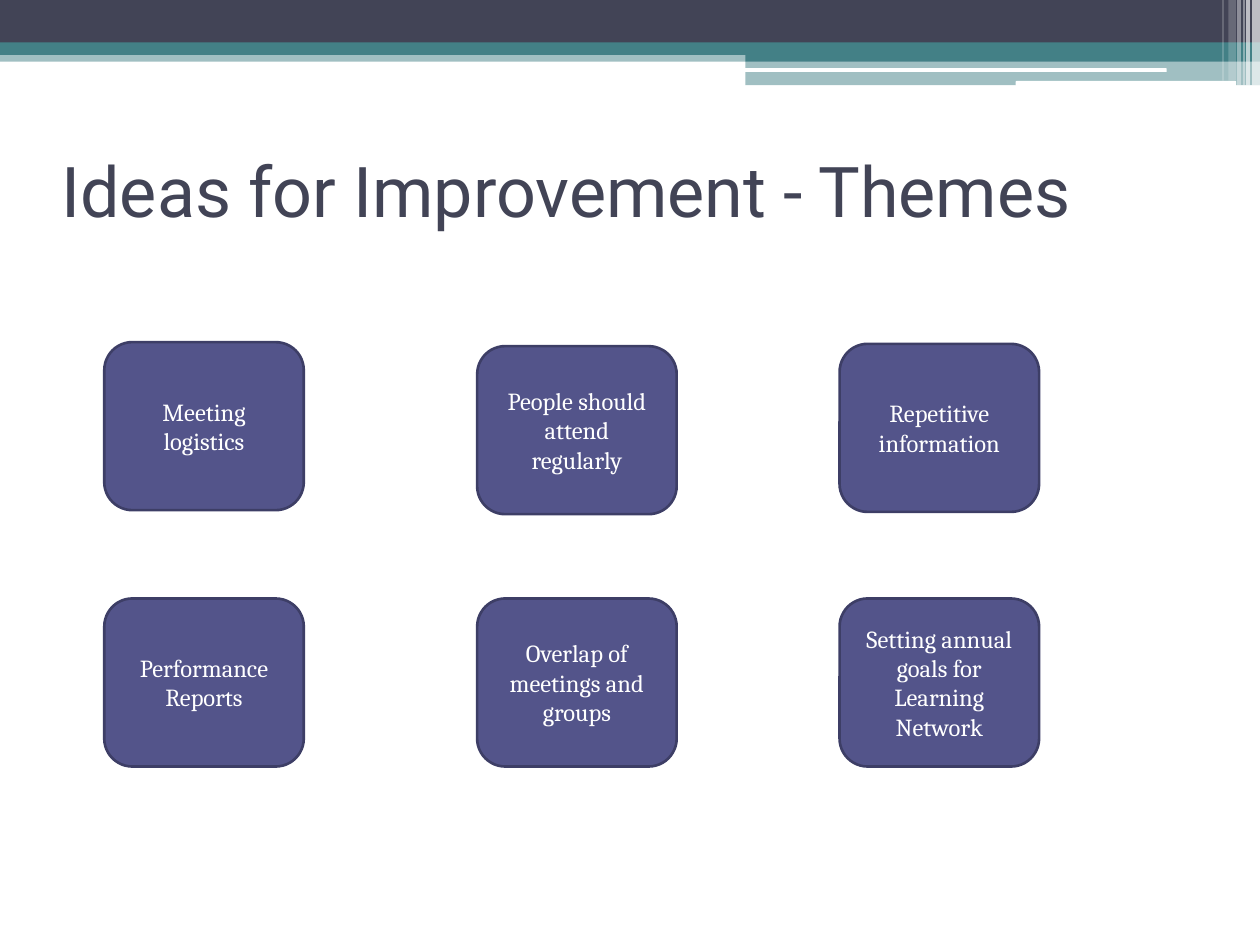
from lxml import etree
from pptx import Presentation
from pptx.dml.color import RGBColor
from pptx.enum.shapes import MSO_SHAPE
from pptx.enum.text import MSO_ANCHOR, PP_ALIGN
from pptx.oxml.ns import qn
from pptx.util import Pt

RECT = MSO_SHAPE.RECTANGLE
ROUND = MSO_SHAPE.ROUNDED_RECTANGLE
MIDDLE = MSO_ANCHOR.MIDDLE
LEFT = PP_ALIGN.LEFT
CENTER = PP_ALIGN.CENTER

COLORS = {
    "white": "FFFFFF",
    "slate": "424456",
    "teal": "438086",
    "violet": "53548A",
    "edge": "3D3E66",
}

BANDS = [
    (RECT, 0, 28.8, 720, 6.48, "teal", 50),
    (RECT, 0, 0, 720, 24.48, "slate", 100),
    (RECT, 0, 24.2, 720, 7.2, "teal", 100),
    (RECT, 426, 28.1, 294, 7.2, "teal", 100),
    (RECT, 426, 35.2, 294, 13.5, "teal", 50),
    (ROUND, 425.5, 39, 241.2, 2.16, "white", 100),
    (ROUND, 580.4, 46.3, 126, 2.88, "white", 100),
]

STRIPES = [
    (715.5, 4.5, 49, 65),
    (712.1, 2.2, 49, 65),
    (710.5, 0.72, 49, 60),
    (707, 2.16, 49, 40),
    (702, 4.32, 46.1, 20),
    (698.5, 0.72, 46.1, 30),
]

COLS = [59.6, 272.7, 479.8]
TOPS = [195.5, 197.8, 196.5]
LOW = 342
CARD = (114, 96)
THEMES = [
    ["Meeting logistics", "People should attend regularly", "Repetitive information"],
    [
        "Performance Reports",
        "Overlap of meetings and groups",
        "Setting annual goals for Learning Network",
    ],
]


def tint(name):
    return RGBColor.from_string(COLORS[name])


def write(shape, text, font, size, color, align):
    frame = shape.text_frame
    frame.word_wrap = True
    frame.vertical_anchor = MIDDLE
    para = frame.paragraphs[0]
    para.alignment = align
    run = para.add_run()
    run.text = text
    run.font.name = font
    run.font.size = Pt(size)
    run.font.color.rgb = tint(color)


def block(slide, kind, x, y, w, h, color, alpha=100):
    shape = slide.shapes.add_shape(kind, Pt(x), Pt(y), Pt(w), Pt(h))
    shape.shadow.inherit = False
    shape.fill.solid()
    shape.fill.fore_color.rgb = tint(color)
    shape.line.fill.background()
    if alpha < 100:
        node = shape.fill._xPr.find(qn("a:solidFill"))[0]
        etree.SubElement(node, qn("a:alpha")).set("val", str(alpha * 1000))
    return shape


def banner(slide):
    for band in BANDS:
        block(slide, *band)
    for x, w, h, alpha in STRIPES:
        block(slide, RECT, x, 0, w, h, "white", alpha)


def heading(slide, text):
    title = slide.shapes.title
    title.left, title.top = Pt(28), Pt(66.2)
    title.width, title.height = Pt(648), Pt(84.2)
    write(title, text, font="Roboto", size=40, color="slate", align=LEFT)
    tree = slide.shapes._spTree
    tree.remove(title._element)
    tree.append(title._element)


def card(slide, x, y, text):
    shape = block(slide, ROUND, x, y, *CARD, "violet")
    shape.line.color.rgb = tint("edge")
    shape.line.width = Pt(1.5)
    write(shape, text, font="Cambria", size=14, color="white", align=CENTER)


def main():
    deck = Presentation()
    deck.slide_width, deck.slide_height = Pt(720), Pt(540)
    slide = deck.slides.add_slide(deck.slide_layouts[5])
    banner(slide)
    heading(slide, "Ideas for Improvement - Themes")
    for tops, row in zip([TOPS, [LOW] * len(COLS)], THEMES):
        for x, y, text in zip(COLS, tops, row):
            card(slide, x, y, text)
    deck.save("out.pptx")


if __name__ == "__main__":
    main()
